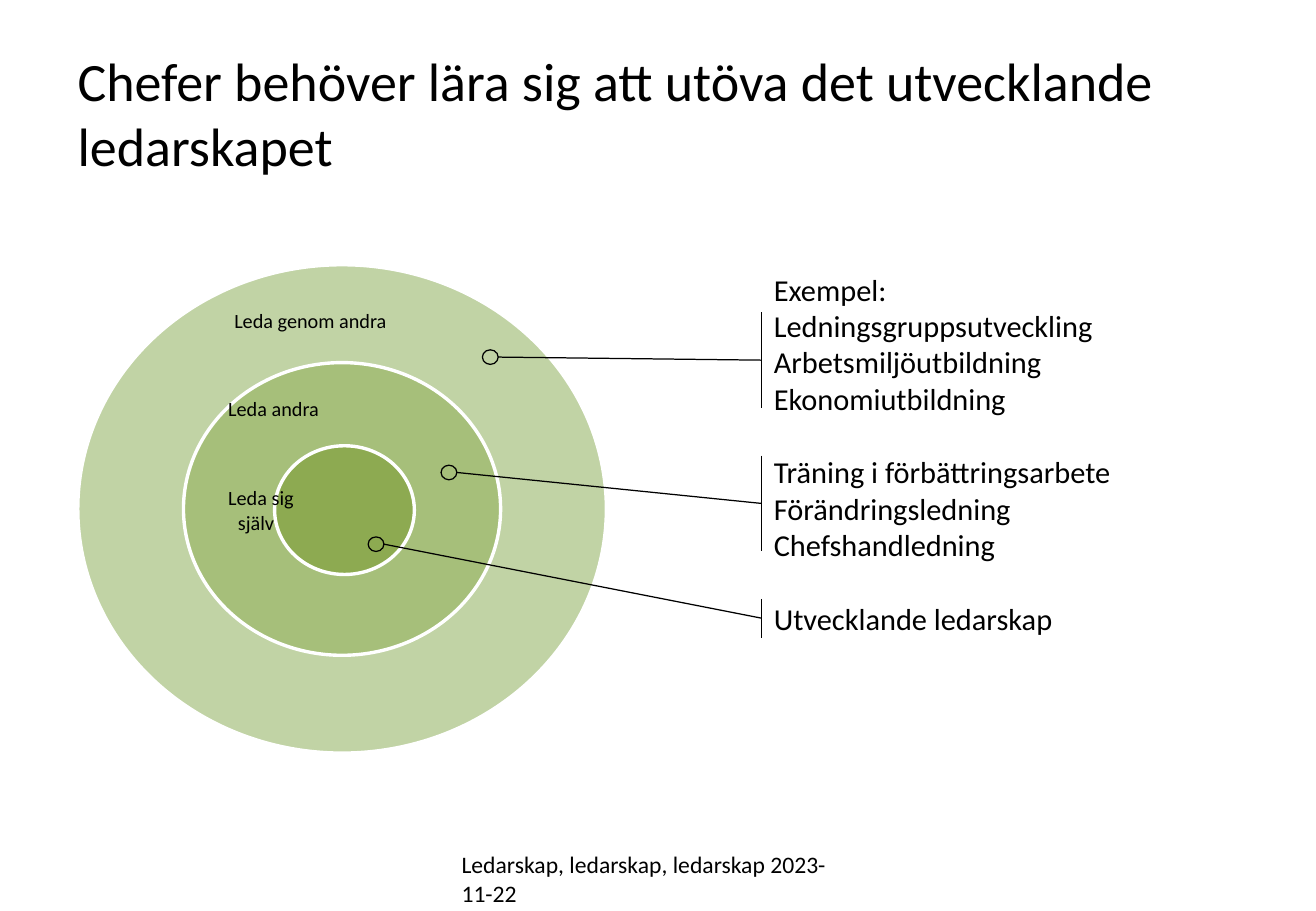
from pptx import Presentation
from pptx.dml.color import RGBColor
from pptx.enum.shapes import MSO_CONNECTOR, MSO_SHAPE
from pptx.enum.text import MSO_ANCHOR
from pptx.oxml.ns import qn
from pptx.util import Inches, Pt
from lxml.etree import SubElement

COLORS = {"ink": "000000", "edge": "FFFFFF",
          "outer": "C1D3A5", "middle": "A6BF7A", "inner": "8DAA51"}
TITLE = "Chefer behöver lära sig att utöva det utvecklande ledarskapet"
FOOTER = "Ledarskap, ledarskap, ledarskap 2023-11-22"
# Centre offset x, y from the middle of the diagram, then width, height
RINGS = [("outer", 0, 0, 4.35, 4.02),
         ("middle", 0, 0, 2.61, 2.41),
         ("inner", 0.02, 0.01, 1.15, 1.06)]
# Offset from the corner of the diagram, height, lines, indent of later lines
LABELS = [(1.14, 1.77, 0.5, ["Leda sig", "själv"], 0.08),
          (1.14, 1.03, 0.3, ["Leda andra"], 0),
          (1.19, 0.31, 0.3, ["Leda genom andra"], 0)]
GROUPS = [["Exempel:", "Ledningsgruppsutveckling", "Arbetsmiljöutbildning",
           "Ekonomiutbildning"],
          ["Träning i förbättringsarbete", "Förändringsledning",
           "Chefshandledning"],
          ["Utvecklande ledarskap"]]
# Spot x, y, then top and bottom of the bar it points to
CALLS = [(3.97, 2.88, 2.57, 3.36),
         (3.63, 3.83, 3.75, 4.54),
         (3.03, 4.42, 4.93, 5.25)]
SPOT = (0.13, 0.12)


def color(name):
    return RGBColor.from_string(COLORS[name])


def add_text(slide, box, lines, size, anchor=MSO_ANCHOR.TOP):
    """Add a text box with one paragraph a line and return the paragraphs."""
    frame = slide.shapes.add_textbox(*map(Inches, box)).text_frame
    frame.word_wrap = True
    frame.vertical_anchor = anchor
    frame.text = "\n".join(lines)
    style = {"name": "Calibri", "size": Pt(size)}
    for para in frame.paragraphs:
        for key, value in style.items():
            setattr(para.font, key, value)
        para.font.color.rgb = color("ink")
    return frame.paragraphs


def add_oval(slide, box, fill, edge, width):
    oval = slide.shapes.add_shape(MSO_SHAPE.OVAL, *map(Inches, box))
    oval.shadow.inherit = False
    if fill:
        oval.fill.solid()
        oval.fill.fore_color.rgb = color(fill)
    else:
        oval.fill.background()
    oval.line.color.rgb = color(edge)
    oval.line.width = Pt(width)


def add_line(slide, *ends):
    line = slide.shapes.add_connector(MSO_CONNECTOR.STRAIGHT,
                                      *map(Inches, ends))
    line.line.color.rgb = color("ink")
    line.line.width = Pt(0.75)
    SubElement(line._element.spPr, qn("a:effectLst"))


def add_rings(slide, box):
    left, top, width, height = box
    for fill, dx, dy, wide, high in RINGS:
        x = left + (width - wide) / 2 + dx
        y = top + (height - high) / 2 + dy
        add_oval(slide, (x, y, wide, high), fill, "edge", 2)
    for dx, dy, high, lines, indent in LABELS:
        paras = add_text(slide, (left + dx, top + dy, 2.1, high), lines, 12)
        for para in paras[1:]:
            para._p.get_or_add_pPr().set("marL", str(Inches(indent)))


def add_list(slide, box):
    """Add the examples, with one line of space between the groups."""
    paras = add_text(slide, box, sum(GROUPS, []), 18)
    start = 0
    for group in GROUPS[:-1]:
        start += len(group)
        paras[start].space_before = Pt(22)


def add_calls(slide, edge):
    """Join each spot in the rings to the middle of its bar at the edge."""
    wide, high = SPOT
    for x, y, top, bottom in CALLS:
        add_oval(slide, (x, y, wide, high), None, "ink", 0.75)
        add_line(slide, edge, top, edge, bottom)
        add_line(slide, x + wide, y + high / 2, edge, (top + bottom) / 2)


def main():
    deck = Presentation()
    deck.slide_width, deck.slide_height = Inches(10.83), Inches(7.5)
    slide = deck.slides.add_slide(deck.slide_layouts[6])
    add_text(slide, (0.54, 0.3, 9.75, 1.25), [TITLE], 32, MSO_ANCHOR.MIDDLE)
    add_rings(slide, (0.64, 2.18, 4.35, 4.02))
    add_list(slide, (6.27, 2.18, 3.2, 3.13))
    add_calls(slide, 6.27)
    add_text(slide, (3.7, 6.95, 3.43, 0.4), [FOOTER], 14)
    deck.save("out.pptx")


if __name__ == "__main__":
    main()
